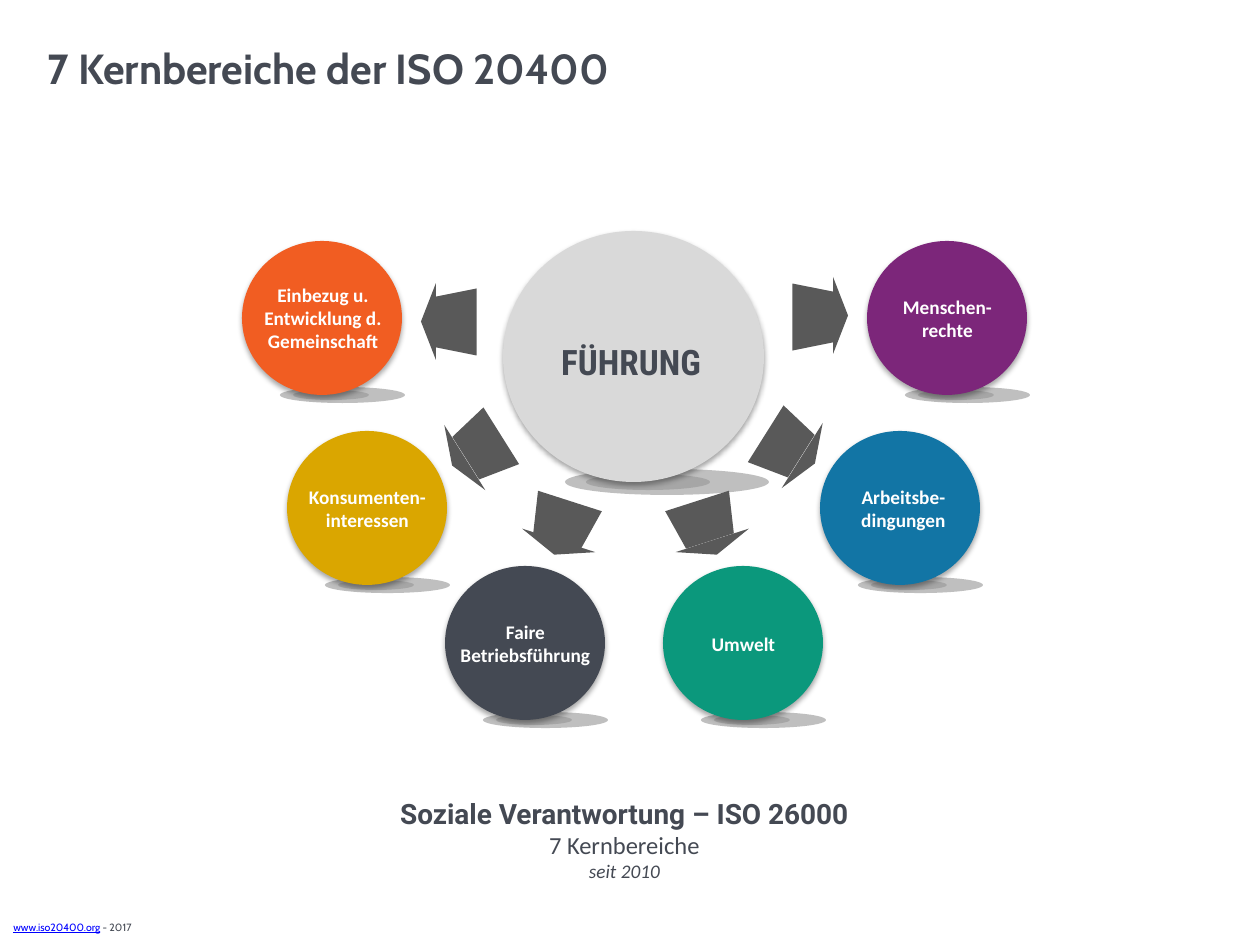
from dataclasses import dataclass

from lxml import etree
from pptx import Presentation
from pptx.dml.color import RGBColor
from pptx.enum.shapes import MSO_SHAPE
from pptx.enum.text import MSO_ANCHOR, MSO_AUTO_SIZE, PP_ALIGN
from pptx.oxml.ns import qn
from pptx.util import Emu, Pt

OVAL = MSO_SHAPE.OVAL
TRAPEZOID = MSO_SHAPE.TRAPEZOID
TRIANGLE = MSO_SHAPE.ISOSCELES_TRIANGLE
LEFT, CENTER = PP_ALIGN.LEFT, PP_ALIGN.CENTER
TOP, MIDDLE = MSO_ANCHOR.TOP, MSO_ANCHOR.MIDDLE
GROW = MSO_AUTO_SIZE.SHAPE_TO_FIT_TEXT

SCALE = 914400 / 126
PAGE_WIDTH, PAGE_HEIGHT = 1260, 945
BALL_WIDTH = 160
SHAFT_SIZE = (67, 42)
HEAD_SIZE = (77, 15)
SHAFT_TAPER = 0.2

COLORS = {
    "text": "444953",
    "link": "0000FF",
    "white": "FFFFFF",
    "center": "D9D9D9",
    "outer_shade": "BFBFBF",
    "inner_shade": "A6A6A6",
    "arrow": "595959",
    "shadow": "000000",
    "fairness": "444953",
    "consumers": "DAA600",
    "community": "F15D22",
    "environment": "0B987C",
    "labour": "1275A5",
    "rights": "7C267A",
}


@dataclass(frozen=True)
class Rect:
    left: int
    top: int
    width: int
    height: int


@dataclass(frozen=True)
class Style:
    name: str
    size: int
    color: str = "text"
    bold: bool = False
    italic: bool = False
    underline: bool = False


@dataclass(frozen=True)
class Span:
    text: str
    style: Style


@dataclass(frozen=True)
class Ball:
    rect: Rect
    color: str


@dataclass(frozen=True)
class Arrow:
    shaft_center: tuple[int, int]
    head_center: tuple[int, int]
    angle: float


@dataclass(frozen=True)
class Label:
    rect: Rect
    text: str


TITLE = Style("Cabin", 24, bold=True)
FOOTER = Style("Cabin", 6)
FOOTER_LINK = Style("Cabin", 6, "link", underline=True)
CENTER_LABEL = Style("Roboto Condensed", 20, bold=True)
BALL_LABEL = Style("Calibri", 11, "white", bold=True)

CAPTION = [
    [Span("Soziale Verantwortung – ISO 26000", Style("Roboto", 16, bold=True))],
    [Span("7 Kernbereiche", Style("Calibri", 14))],
    [Span("seit 2010", Style("Calibri", 11, italic=True))],
]

BALLS = [
    Ball(Rect(503, 231, 261, 251), "center"),
    Ball(Rect(445, 566, BALL_WIDTH, 154), "fairness"),
    Ball(Rect(287, 431, BALL_WIDTH, 154), "consumers"),
    Ball(Rect(242, 241, BALL_WIDTH, 154), "community"),
    Ball(Rect(663, 566, BALL_WIDTH, 154), "environment"),
    Ball(Rect(820, 431, BALL_WIDTH, 154), "labour"),
    Ball(Rect(867, 241, BALL_WIDTH, 154), "rights"),
]

SHADES = [
    (Rect(38, 146, 125, 16), "outer_shade"),
    (Rect(51, 149, 76, 10), "inner_shade"),
]

ARROWS = [
    Arrow((813, 317), (841, 316), 90),
    Arrow((455, 322), (428, 321), 270),
    Arrow((784, 445), (808, 459), 122.2),
    Arrow((484, 447), (459, 461), 237.8),
    Arrow((704, 521), (714, 547), 162.2),
    Arrow((564, 521), (556, 547), 197.8),
]

LABELS = [
    Label(Rect(239, 276, 168, 83), "Einbezug u. Entwicklung d. Gemeinschaft"),
    Label(Rect(286, 479, 163, 59), "Konsumenten-\ninteressen"),
    Label(Rect(444, 614, 163, 59), "Faire Betriebsführung"),
    Label(Rect(662, 625, 163, 37), "Umwelt"),
    Label(Rect(822, 479, 163, 59), "Arbeitsbe-dingungen"),
    Label(Rect(872, 289, 151, 59), "Menschen-rechte"),
]


def px(value: float) -> Emu:
    return Emu(round(value * SCALE))


def place(rect: Rect) -> list[Emu]:
    return [px(value) for value in (rect.left, rect.top, rect.width, rect.height)]


def rgb(color: str) -> RGBColor:
    return RGBColor.from_string(COLORS[color])


def fill_text(box, paragraphs: list[list[Span]], align=LEFT, anchor=TOP) -> None:
    frame = box.text_frame
    settings = {"word_wrap": True, "auto_size": GROW, "vertical_anchor": anchor}
    for name, value in settings.items():
        setattr(frame, name, value)
    for index, spans in enumerate(paragraphs):
        para = frame.add_paragraph() if index else frame.paragraphs[0]
        para.alignment = align
        for span in spans:
            add_span(para, span)


def add_span(para, span: Span) -> None:
    style = span.style
    formats = {
        "name": style.name,
        "size": Pt(style.size),
        "bold": style.bold,
        "italic": style.italic,
        "underline": style.underline,
    }
    for index, line in enumerate(span.text.split("\n")):
        if index:
            para.add_line_break()
        run = para.add_run()
        run.text = line
        for name, value in formats.items():
            setattr(run.font, name, value)
        run.font.color.rgb = rgb(style.color)


def add_text(page, rect: Rect, paragraphs: list[list[Span]], align=LEFT, anchor=TOP) -> None:
    fill_text(page.shapes.add_textbox(*place(rect)), paragraphs, align, anchor)


def add_solid(page, kind, rect: Rect, color: str):
    shape = page.shapes.add_shape(kind, *place(rect))
    shape.shadow.inherit = False
    shape.fill.solid()
    shape.fill.fore_color.rgb = rgb(color)
    shape.line.fill.background()
    return shape


def add_shadow(shape) -> None:
    effects = shape._element.spPr.find(qn("a:effectLst"))
    shadow = etree.SubElement(effects, qn("a:outerShdw"), blurRad="40000",
                              dist="23000", dir="5400000", rotWithShape="0")
    color = etree.SubElement(shadow, qn("a:srgbClr"), val=COLORS["shadow"])
    etree.SubElement(color, qn("a:alpha"), val="35000")


def add_ball(page, ball: Ball) -> None:
    factor = ball.rect.width / BALL_WIDTH
    for shade, color in SHADES:
        rect = Rect(
            round(ball.rect.left + shade.left * factor),
            round(ball.rect.top + shade.top * factor),
            round(shade.width * factor),
            round(shade.height * factor),
        )
        add_solid(page, OVAL, rect, color)
    add_shadow(add_solid(page, OVAL, ball.rect, ball.color))


def add_arrow(page, arrow: Arrow) -> None:
    parts = [(TRAPEZOID, arrow.shaft_center, SHAFT_SIZE), (TRIANGLE, arrow.head_center, HEAD_SIZE)]
    for kind, (x, y), (width, height) in parts:
        rect = Rect(round(x - width / 2), round(y - height / 2), width, height)
        shape = add_solid(page, kind, rect, "arrow")
        shape.rotation = arrow.angle
        if kind == TRAPEZOID:
            shape.adjustments[0] = SHAFT_TAPER


def main() -> None:
    deck = Presentation()
    deck.slide_width, deck.slide_height = px(PAGE_WIDTH), px(PAGE_HEIGHT)
    page = deck.slides.add_slide(deck.slide_layouts[5])
    title = page.shapes.title
    title.left, title.top, title.width, title.height = place(Rect(35, 36, 843, 63))
    fill_text(title, [[Span("7 Kernbereiche der ISO 20400", TITLE)]])
    add_text(page, Rect(1, 915, 815, 25),
             [[Span("www.iso20400.org", FOOTER_LINK), Span(" - 2017", FOOTER)]])
    add_text(page, Rect(203, 790, 843, 100), CAPTION, CENTER)
    for ball in BALLS:
        add_ball(page, ball)
    for arrow in ARROWS:
        add_arrow(page, arrow)
    add_text(page, Rect(495, 334, 272, 55), [[Span("FÜHRUNG", CENTER_LABEL)]], CENTER, MIDDLE)
    for label in LABELS:
        add_text(page, label.rect, [[Span(label.text, BALL_LABEL)]], CENTER, MIDDLE)
    deck.save("out.pptx")


if __name__ == "__main__":
    main()
